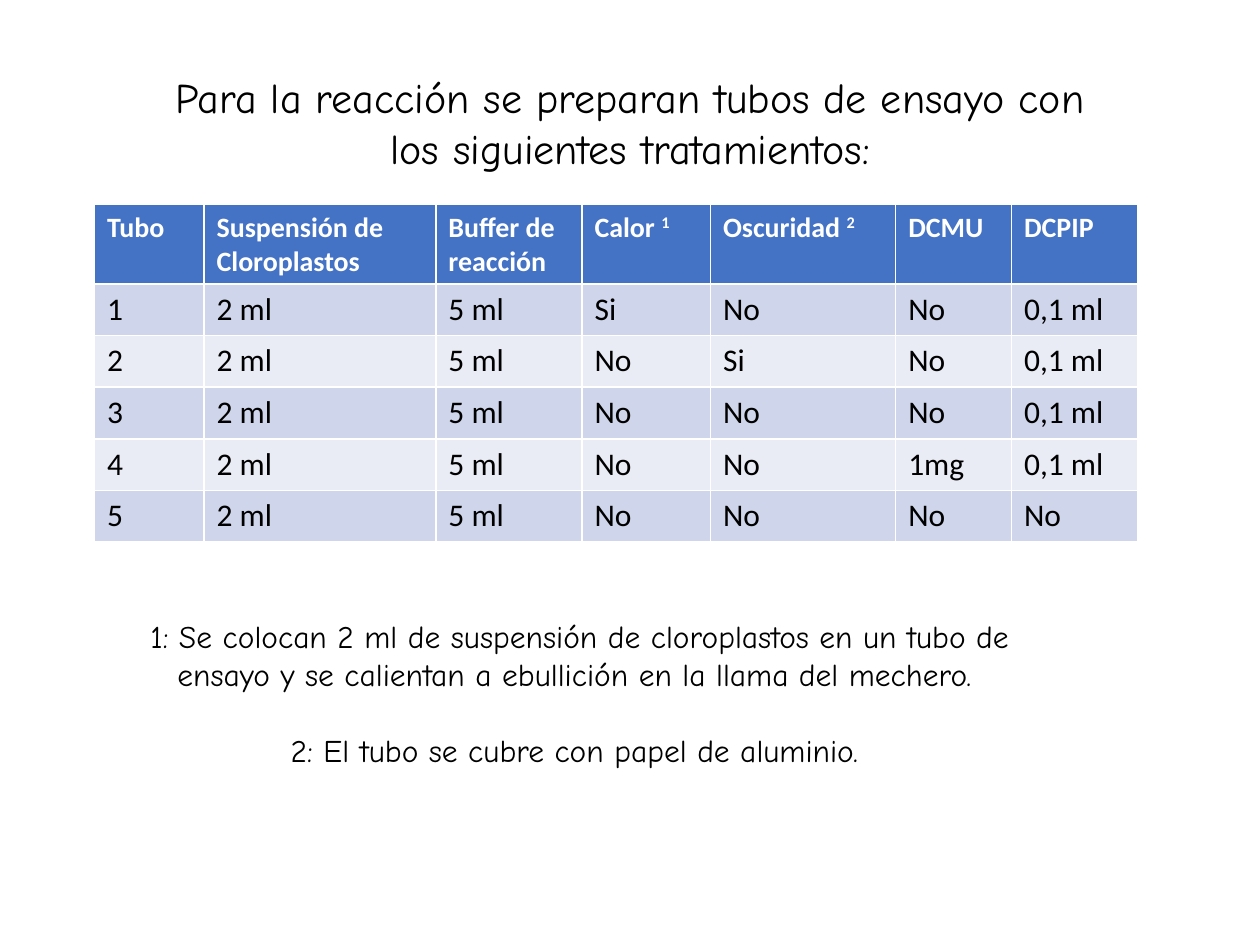
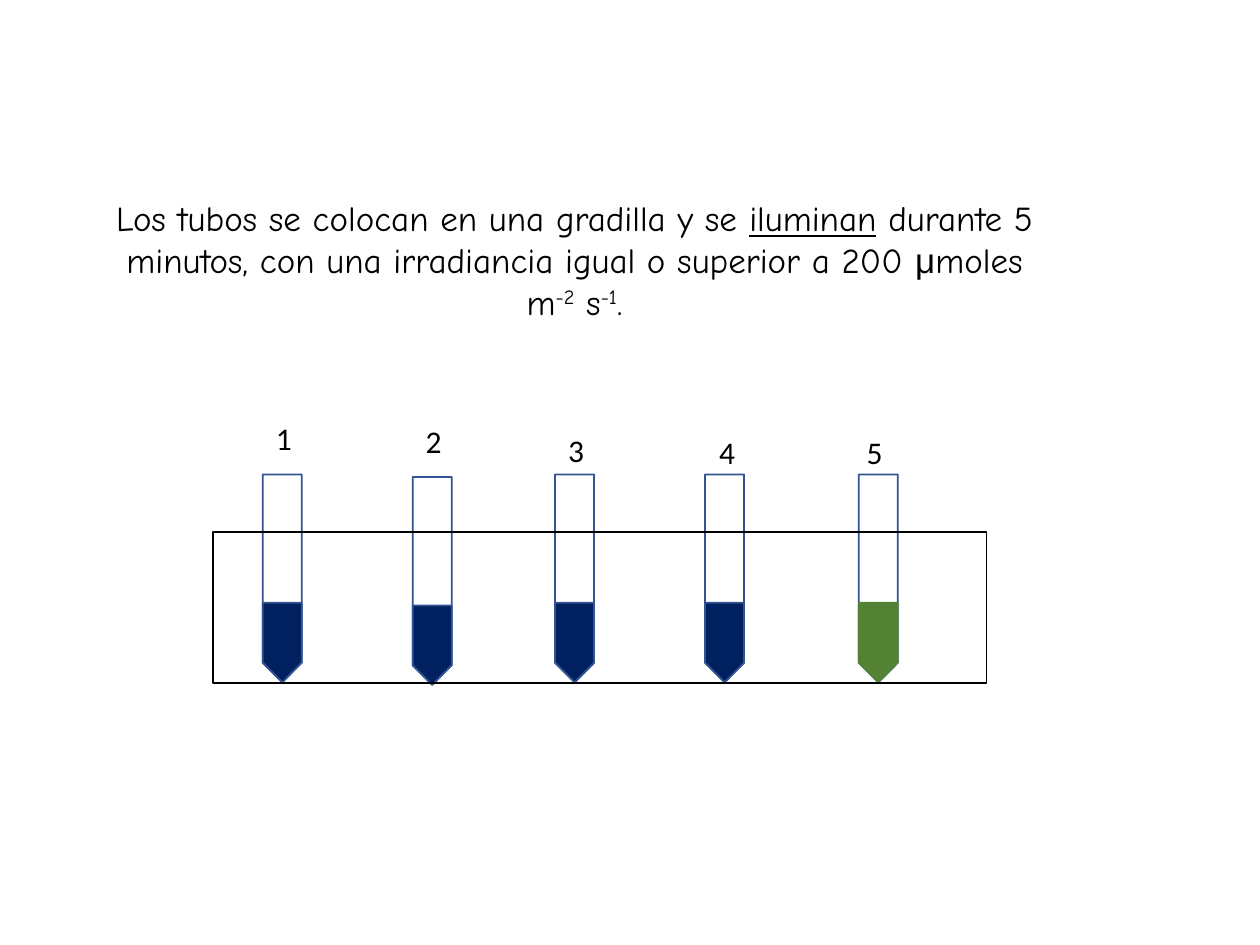
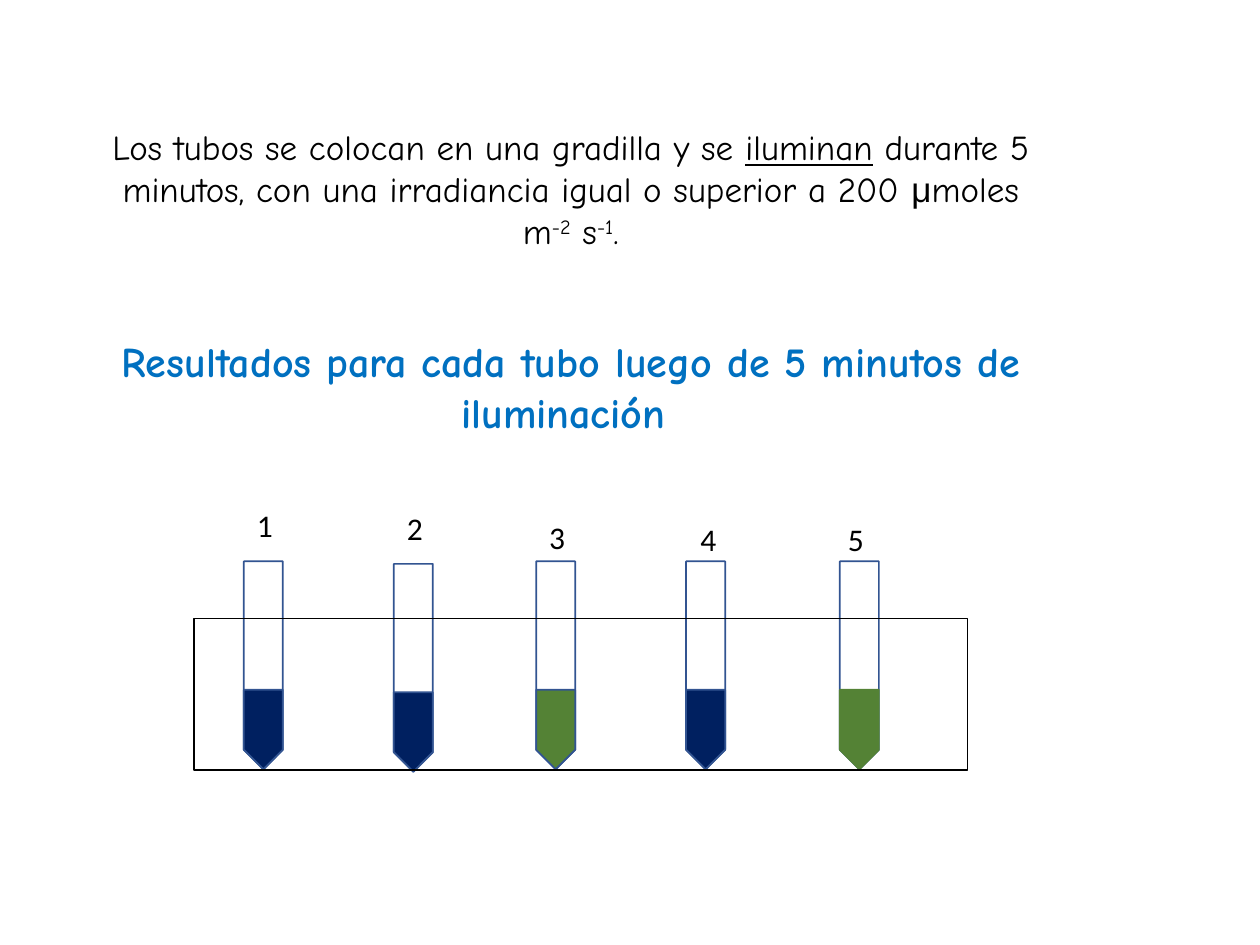
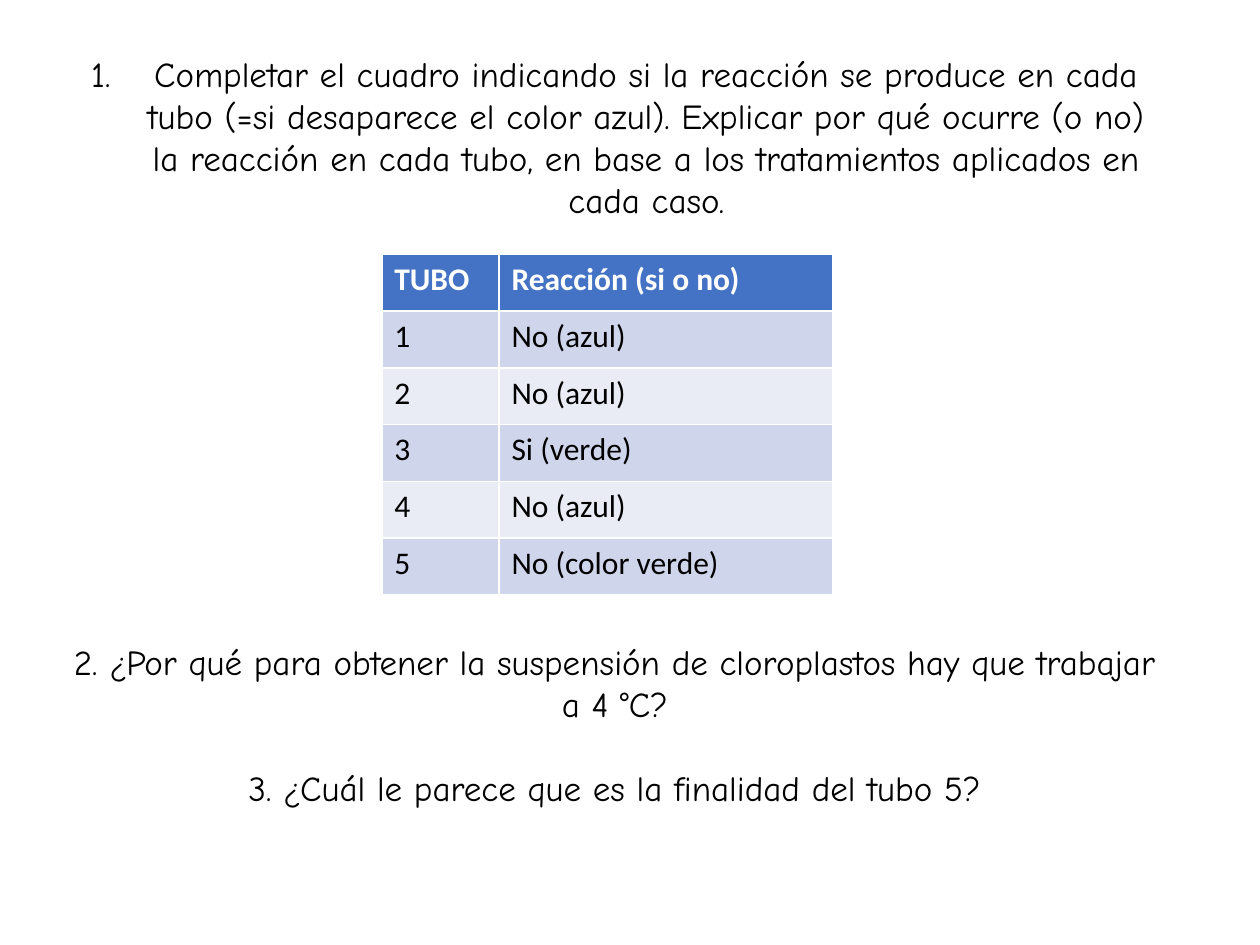
from pptx import Presentation
from pptx.dml.color import RGBColor as Rgb
from pptx.enum.shapes import MSO_SHAPE as Kind
from pptx.enum.text import MSO_AUTO_SIZE as Fit, PP_ALIGN as Align
from pptx.util import Inches, Pt
from lxml.etree import SubElement as Sub
from pptx.oxml.ns import qn

BLACK = Rgb(0x00, 0x00, 0x00)
WHITE = Rgb(0xFF, 0xFF, 0xFF)
HEAD = Rgb(0x44, 0x72, 0xC4)
BANDS = (Rgb(0xCF, 0xD5, 0xEA), Rgb(0xE9, 0xEB, 0xF5))
EDGE = Rgb(0x32, 0x54, 0x91)
NAVY = Rgb(0x00, 0x20, 0x60)
GREEN = Rgb(0x54, 0x82, 0x35)
BLUE = Rgb(0x00, 0x70, 0xC0)

HAND = {"name": "Comic Neue", "size": Pt(20), "bold": False, "color": BLACK}
CELL = {"name": "Calibri", "size": Pt(18), "bold": False, "color": BLACK}
TITLE = {"size": Pt(24)}
NOTE = {"size": Pt(18)}
UP = {"base": 30000}

INTRO = [("Para la reacción se preparan tubos de ensayo con los siguientes tratamientos:", TITLE)]
NOTES = [
    [("1: Se colocan 2 ml de suspensión de cloroplastos en un tubo de ensayo y se calientan a ebullición en la llama del mechero. ", NOTE)],
    [("2: El tubo se cubre con papel de aluminio. ", NOTE)],
]
MIXES = [
    ["Tubo", "Suspensión de Cloroplastos", "Buffer de reacción",
     [("Calor ", {}), ("1", UP)], [("Oscuridad ", {}), ("2", UP)], "DCMU", "DCPIP"],
    ["1", "2 ml", "5 ml", "Si", "No", "No", "0,1 ml"],
    ["2", "2 ml", "5 ml", "No", "Si", "No", "0,1 ml"],
    ["3", "2 ml", "5 ml", "No", "No", "No", "0,1 ml"],
    ["4", "2 ml", "5 ml", "No", "No", "1mg", "0,1 ml"],
    ["5", "2 ml", "5 ml", "No", "No", "No", "No"],
]
LIGHT = [
    ("Los tubos se colocan en una gradilla y se ", {}),
    ("iluminan", {"underline": True}),
    (" durante 5 minutos, con una irradiancia igual o superior a 200 ", {}),
    ("μ", {"name": "Arial"}),
    ("moles m", {}), ("-2", UP), (" s", {}), ("-1", UP), (".", {}),
]
RESULT = [("Resultados para cada tubo luego de 5 minutos de iluminación ",
           {"size": Pt(24), "bold": True, "color": BLUE})]
TASKS = [
    [("Completar el cuadro indicando si la reacción se produce en cada tubo (=si desaparece el color azul). Explicar por qué ocurre (o no) la reacción en cada tubo, en base a los tratamientos aplicados en cada caso.", {})],
    [("2. ¿Por qué para obtener la suspensión de cloroplastos hay que trabajar a 4 °C?", {})],
    [("3. ¿Cuál le parece que es la finalidad del tubo 5?", {})],
]
ANSWERS = [
    ["TUBO", "Reacción (si o no)"],
    ["1", "No (azul)"],
    ["2", "No (azul)"],
    ["3", "Si (verde)"],
    ["4", "No (azul)"],
    ["5", "No (color verde)"],
]

# Tube centre, drop, label left and label top, measured from the rack corner.
TUBES = [
    (0.55, 0, 0.4, -0.94),
    (1.74, 0.02, 1.59, -0.92),
    (2.87, 0, 2.72, -0.85),
    (4.06, 0, 3.92, -0.83),
    (5.28, 0, 5.09, -0.83),
]
RACK = (6.14, 1.2)
WIDE, TALL, FULL = 0.31, 1.65, 0.63
TUBE_MID, FULL_MID = 0.37, 0.88


def place(*nums):
    return [Inches(n) for n in nums]


def write(para, runs, base):
    if isinstance(runs, str):
        runs = [(runs, {})]
    for text, extra in runs:
        run = para.add_run()
        run.text = text
        for key, val in {**base, **extra}.items():
            if key == "color":
                run.font.color.rgb = val
            elif key == "base":
                run._r.get_or_add_rPr().set("baseline", str(val))
            else:
                setattr(run.font, key, val)


def add_text(shapes, at, paras, gaps=(0,), base=HAND, align=Align.CENTER):
    frame = shapes.add_textbox(*place(*at)).text_frame
    frame.word_wrap = True
    frame.auto_size = Fit.SHAPE_TO_FIT_TEXT
    for num, (runs, gap) in enumerate(zip(paras, gaps)):
        para = frame.add_paragraph() if num else frame.paragraphs[0]
        para.alignment = align
        if gap:
            para.space_before = Pt(gap)
        write(para, runs, base)
    return frame


def number(para):
    props = para._p.get_or_add_pPr()
    for key, inch in (("marL", 0.5), ("indent", -0.5)):
        props.set(key, str(Inches(inch)))
    Sub(props, qn("a:buFont"), typeface="+mj-lt")
    Sub(props, qn("a:buAutoNum"), type="arabicPeriod")


def add_grid(slide, left, top, cols, high, rows, size):
    grid = slide.shapes.add_table(
        len(rows), len(cols), *place(left, top, sum(cols), high * len(rows))).table
    for col, wide in zip(grid.columns, cols):
        col.width = Inches(wide)
    for r, row in enumerate(rows):
        grid.rows[r].height = Inches(high)
        look = CELL if r else {**CELL, "size": size, "bold": True, "color": WHITE}
        for c, text in enumerate(row):
            cell = grid.cell(r, c)
            cell.fill.solid()
            cell.fill.fore_color.rgb = BANDS[(r - 1) % 2] if r else HEAD
            write(cell.text_frame.paragraphs[0], text, look)


def add_form(shapes, kind, at, line, fill=None, turn=0):
    form = shapes.add_shape(kind, *place(*at))
    form.shadow.inherit = False
    form.rotation = turn
    form.line.color.rgb = line
    form.line.width = Pt(1)
    if fill is None:
        form.fill.background()
    else:
        form.fill.solid()
        form.fill.fore_color.rgb = fill


def add_rack(slide, left, top, fills):
    shapes = slide.shapes.add_group_shape().shapes
    for num, ((mid, drop, x, y), fill) in enumerate(zip(TUBES, fills), 1):
        edge = GREEN if num == len(TUBES) else EDGE
        for size, level, line, tint in ((TALL, TUBE_MID, EDGE, None),
                                        (FULL, FULL_MID, edge, fill)):
            at = (left + mid - size / 2, top + level + drop - WIDE / 2, size, WIDE)
            add_form(shapes, Kind.PENTAGON, at, line, tint, 90)
        add_text(shapes, (left + x, top + y, WIDE, 0.4), [str(num)],
                 base=CELL, align=Align.LEFT)
    add_form(shapes, Kind.RECTANGLE, (left, top, *RACK), BLACK)


def main():
    deck = Presentation()
    deck.slide_width, deck.slide_height = place(10, 7.5)
    mix, before, after, quiz = [deck.slides.add_slide(deck.slide_layouts[6])
                                for _ in range(4)]

    add_text(mix.shapes, (1.14, 0.52, 7.72, 0.91), [INTRO])
    add_grid(mix, 0.75, 1.62, (0.87, 1.84, 1.16, 1.02, 1.47, 0.92, 1), 0.41, MIXES, Pt(16))
    add_text(mix.shapes, (0.74, 4.85, 7.72, 1.31), NOTES, (0, 21.6))

    add_text(before.shapes, (0.7, 1.51, 7.72, 1.41), [LIGHT])
    add_rack(before, 1.69, 4.22, (NAVY, NAVY, NAVY, NAVY, GREEN))

    add_text(after.shapes, (0.67, 0.95, 7.72, 2.59), [LIGHT, RESULT], (0, 48))
    add_rack(after, 1.54, 4.91, (NAVY, NAVY, GREEN, NAVY, GREEN))

    tasks = add_text(quiz.shapes, (0.47, 0.37, 8.82, 7.17), TASKS, (0, 240, 24))
    number(tasks.paragraphs[0])
    add_grid(quiz, 3.03, 2.02, (0.93, 2.65), 0.45, ANSWERS, Pt(18))

    deck.save("out.pptx")


if __name__ == "__main__":
    main()
